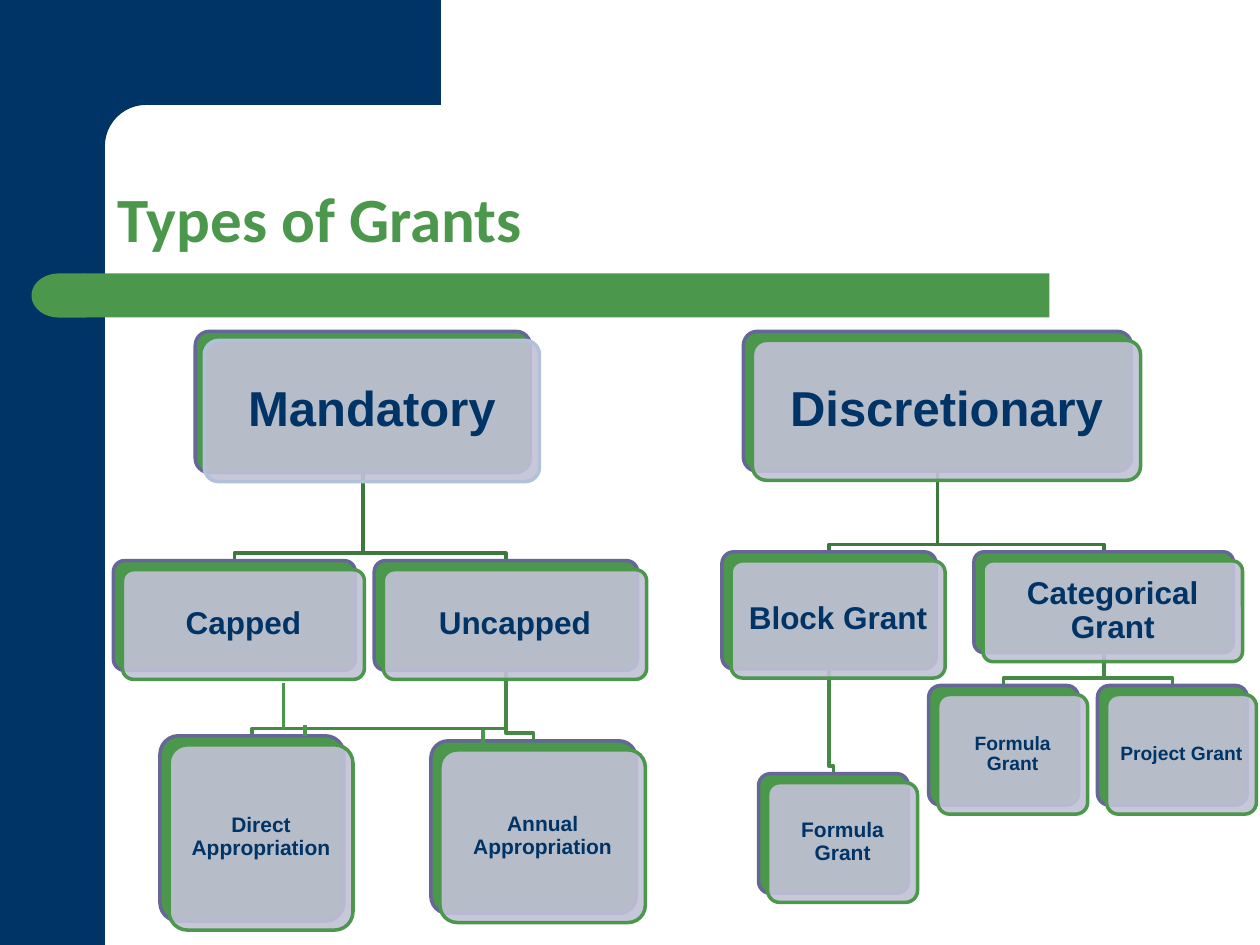
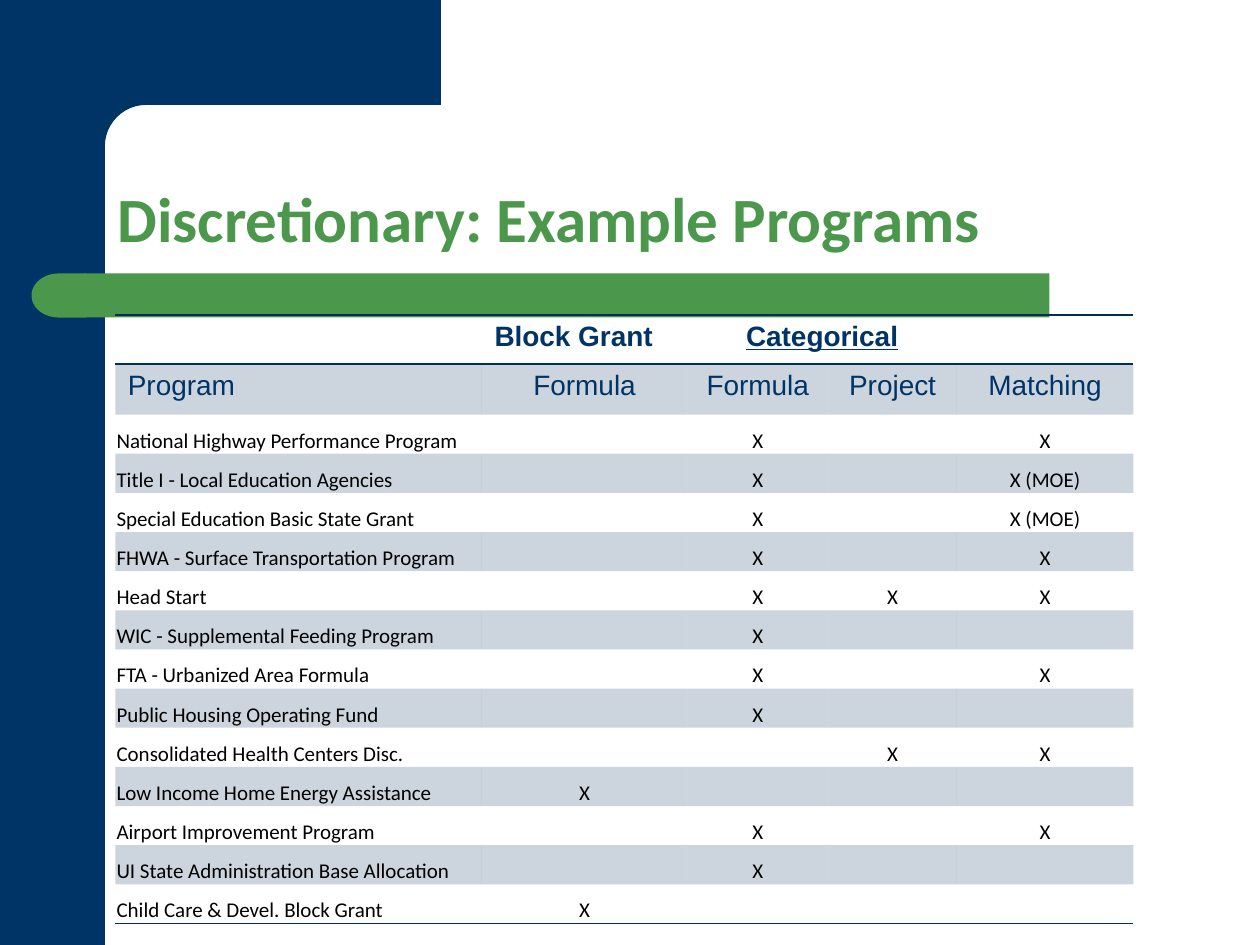
from collections import namedtuple
from math import cos, pi, sin

from lxml.etree import SubElement
from pptx import Presentation as Deck
from pptx.dml.color import RGBColor as Rgb
from pptx.enum.shapes import MSO_CONNECTOR as Wire, MSO_SHAPE as Kind
from pptx.enum.text import MSO_ANCHOR as Anchor, PP_ALIGN as Align
from pptx.oxml.ns import qn
from pptx.util import Inches, Pt

COLS, ROWS = 100, 75
UNIT = Inches(0.1)
NAVY, GREEN, INK = "003366", "4B974B", "002D5C"
PURPLE, LILAC, SKY = "666699", "C2C2D6", "B1C1D9"
DEEP, LEAF = "3C793C", "448944"
EDGE = 8.33
SHIFT = 0.72
BEND = 0.6
NO_STYLE = "{2D5ABB26-0587-4C30-8999-92F81FD0307C}"

Box = namedtuple("Box", "text x y w h size root rim")

BOXES = {
    "man": Box("Mandatory", 15.5, 26.3, 26.6, 11.2, 28, None, SKY),
    "cap": Box("Capped", 9, 44.5, 19.2, 8.7, 18, "man", GREEN),
    "unc": Box("Uncapped", 29.7, 44.5, 20.9, 8.7, 18, "man", GREEN),
    "dir": Box("Direct Appropriation", 12.7, 58.4, 14.6, 14.7, 12, "unc", GREEN),
    "ann": Box("Annual Appropriation", 34.2, 58.8, 16.3, 13.7, 12, "unc", GREEN),
    "dis": Box("Discretionary", 59, 26.3, 30.8, 11.1, 28, None, GREEN),
    "blk": Box("Block Grant", 57.3, 43.8, 17, 9.3, 18, "dis", GREEN),
    "for": Box("Formula Grant", 60.2, 61.4, 11.9, 9.5, 12, "blk", GREEN),
    "cat": Box("Categorical Grant", 77.3, 43.8, 20.6, 8, 18, "dis", GREEN),
    "fml": Box("Formula Grant", 73.7, 54.4, 11.9, 9.5, 11, "cat", GREEN),
    "prj": Box("Project Grant", 87.1, 54.4, 11.9, 9.5, 11, "cat", GREEN),
}

STUBS = [(22.5, 54.2, 57.9), (24.2, 57.5, 58.4), (38.3, 57.9, 59.2)]

WIDTHS = [29.1, 16.3, 11.2, 10.2, 14]
HEIGHTS = [3.88, 4.03] + [3.11] * 13
TABLE = """|Block Grant|Categorical||
Program|Formula|Formula|Project|Matching
National Highway Performance Program||X||X
Title I - Local Education Agencies||X||X (MOE)
Special Education Basic State Grant||X||X (MOE)
FHWA - Surface Transportation Program||X||X
Head Start||X|X|X
WIC - Supplemental Feeding Program||X||
FTA - Urbanized Area Formula||X||X
Public Housing Operating Fund||X||
Consolidated Health Centers Disc.|||X|X
Low Income Home Energy Assistance|X|||
Airport Improvement Program||X||X
UI State Administration Base Allocation||X||
Child Care & Devel. Block Grant|X|||"""

HEAD = dict(name="Arial", size=Pt(16), bold=True)
SUB = dict(name="Arial", size=Pt(16), bold=False)
BODY = dict(name="Calibri", size=Pt(12), bold=False)
TITLE = dict(name="Calibri", size=Pt(36), bold=True)


def grid(*vals):
    return [round(val * UNIT) for val in vals]


def put(item, vals):
    for key, val in vals.items():
        setattr(item, key, val)


def pads(left, top, right, base):
    names = ("margin_left", "margin_top", "margin_right", "margin_bottom")
    return dict(zip(names, grid(left, top, right, base)))


def paint(fill, tone, alpha=None):
    fill.solid()
    fill.fore_color.rgb = Rgb.from_string(tone)
    if alpha:
        node = fill._xPr.find(".//" + qn("a:srgbClr"))
        SubElement(node, qn("a:alpha"), val=str(alpha * 1000))


def stroke(line, tone, width):
    paint(line.fill, tone)
    line.width = Pt(width)


def write(para, text, font, tone, **form):
    put(para, form)
    run = para.add_run()
    run.text = text
    put(run.font, font)
    paint(run.font.fill, tone)


def block(slide, kind, area, tone, alpha=None):
    shape = slide.shapes.add_shape(kind, *grid(*area))
    shape.shadow.inherit = False
    paint(shape.fill, tone, alpha)
    shape.line.fill.background()
    return shape


def trace(slide, spots, close):
    spots = [grid(*spot) for spot in spots]
    form = slide.shapes.build_freeform(*spots[0])
    form.add_line_segments(spots[1:], close=close)
    shape = form.convert_to_shape()
    shape.shadow.inherit = False
    return shape


def frame(slide, layout):
    side = block(slide, Kind.RECTANGLE, (0, 0, EDGE, ROWS), NAVY)
    turns = [pi / 2 * step / 12 for step in range(13)]
    curve = [(11.6 - 3.27 * sin(t), 11.6 - 3.27 * cos(t)) for t in turns]
    spots = [(35, 0), (35, EDGE), *curve, (EDGE, 12.8), (5, 12.8), (5, 0)]
    crown = trace(slide, spots, True)
    paint(crown.fill, NAVY)
    crown.line.fill.background()
    bar = block(slide, Kind.RECTANGLE, (6.7, 21.7, 76.6, 3.5), GREEN)
    cap = block(slide, Kind.FLOWCHART_DELAY, (2.5, 21.7, 4.3, 3.5), GREEN)
    cap.rotation = 180
    for spot, item in enumerate((side, crown, bar, cap)):
        item.element.nvSpPr.cNvPr.set("id", str(100 + spot))
        layout.shapes.element.insert(2 + spot, item.element)


def head(slide, text):
    title = slide.shapes.title
    area = grid(EDGE, EDGE, 86.7, 12.5)
    put(title, dict(zip(("left", "top", "width", "height"), area)))
    put(title.text_frame, dict(vertical_anchor=Anchor.BOTTOM, word_wrap=True))
    write(title.text_frame.paragraphs[0], text, TITLE, GREEN,
          alignment=Align.LEFT, line_spacing=0.9)


def link(slide, root, kid):
    mid, end = root.x + root.w / 2, kid.x + kid.w / 2
    turn = kid.y - BEND
    spots = [(mid, root.y + root.h), (mid, turn), (end, turn), (end, kid.y)]
    path_line = trace(slide, spots, False)
    path_line.fill.background()
    stroke(path_line.line, LEAF if root.root else DEEP, 2)


def card(slide, box):
    area = (box.x, box.y, box.w, box.h)
    back = block(slide, Kind.ROUNDED_RECTANGLE, area, GREEN)
    area = (box.x + SHIFT, box.y + SHIFT, box.w, box.h)
    front = block(slide, Kind.ROUNDED_RECTANGLE, area, LILAC, 90)
    for shape, rim in ((back, PURPLE), (front, box.rim)):
        shape.adjustments[0] = 0.1
        stroke(shape.line, rim, 2)
    text = front.text_frame
    put(text, dict(word_wrap=True, vertical_anchor=Anchor.MIDDLE))
    put(text, pads(*[box.size * 0.04] * 4))
    font = dict(name="Arial", size=Pt(box.size), bold=True)
    write(text.paragraphs[0], box.text, font, NAVY,
          alignment=Align.CENTER, line_spacing=0.9)


def stub(slide, x, top, base):
    line = slide.shapes.add_connector(Wire.STRAIGHT, *grid(x, top, x, base))
    stroke(line.line, GREEN, 2.25)
    SubElement(line.element.spPr, qn("a:effectLst"))


def rule(cell, side):
    props = cell._tc.get_or_add_tcPr()
    line = SubElement(props, qn("a:" + side), w=str(Pt(1)))
    fill = SubElement(line, qn("a:solidFill"))
    SubElement(fill, qn("a:srgbClr"), val=INK)
    props.insert(0, line)


def fill_cell(cell, text, row, col):
    font = (HEAD, SUB, BODY)[min(row, 2)]
    para = cell.text_frame.paragraphs[0]
    if row > 1:
        put(cell, pads(0.1, 0.1, 0.1, 0))
        cell.vertical_anchor = Anchor.BOTTOM
    if text:
        left = col == 0 or (row, col) == (0, 1)
        write(para, text, font, "000000" if row > 1 else NAVY,
              alignment=Align.LEFT if left else Align.CENTER)
    else:
        size = str(int(font["size"].pt * 100))
        SubElement(para._p, qn("a:endParaRPr"), sz=size)
    if row % 2:
        paint(cell.fill, INK, 20)
    else:
        cell.fill.background()
    if row in (0, len(HEIGHTS) - 1):
        rule(cell, "lnB")
    if row == 0:
        rule(cell, "lnT")


def chart_tree(slide):
    for box in BOXES.values():
        if box.root:
            link(slide, BOXES[box.root], box)
    for box in BOXES.values():
        card(slide, box)
    for spot in STUBS:
        stub(slide, *spot)


def list_table(slide):
    lines = [line.split("|") for line in TABLE.split("\n")]
    area = grid(9.15, 25, sum(WIDTHS), sum(HEIGHTS))
    holder = slide.shapes.add_table(len(lines), len(WIDTHS), *area)
    table = holder.table
    next(holder.element.iter(qn("a:tableStyleId"))).text = NO_STYLE
    put(table, dict(first_row=False, horz_banding=False))
    for col, width in zip(table.columns, grid(*WIDTHS)):
        col.width = width
    for row, height in zip(table.rows, grid(*HEIGHTS)):
        row.height = height
    for row, line in enumerate(lines):
        for col, text in enumerate(line):
            fill_cell(table.cell(row, col), text, row, col)
    table.cell(0, 2).merge(table.cell(0, 3))
    table.cell(0, 2).text_frame.paragraphs[0].runs[0].font.underline = True


def main():
    deck = Deck()
    put(deck, dict(slide_width=COLS * UNIT, slide_height=ROWS * UNIT))
    layout = deck.slide_layouts[5]
    types = deck.slides.add_slide(layout)
    frame(types, layout)
    head(types, "Types of Grants")
    chart_tree(types)
    programs = deck.slides.add_slide(layout)
    head(programs, "Discretionary: Example Programs")
    list_table(programs)
    deck.save("out.pptx")


if __name__ == "__main__":
    main()
